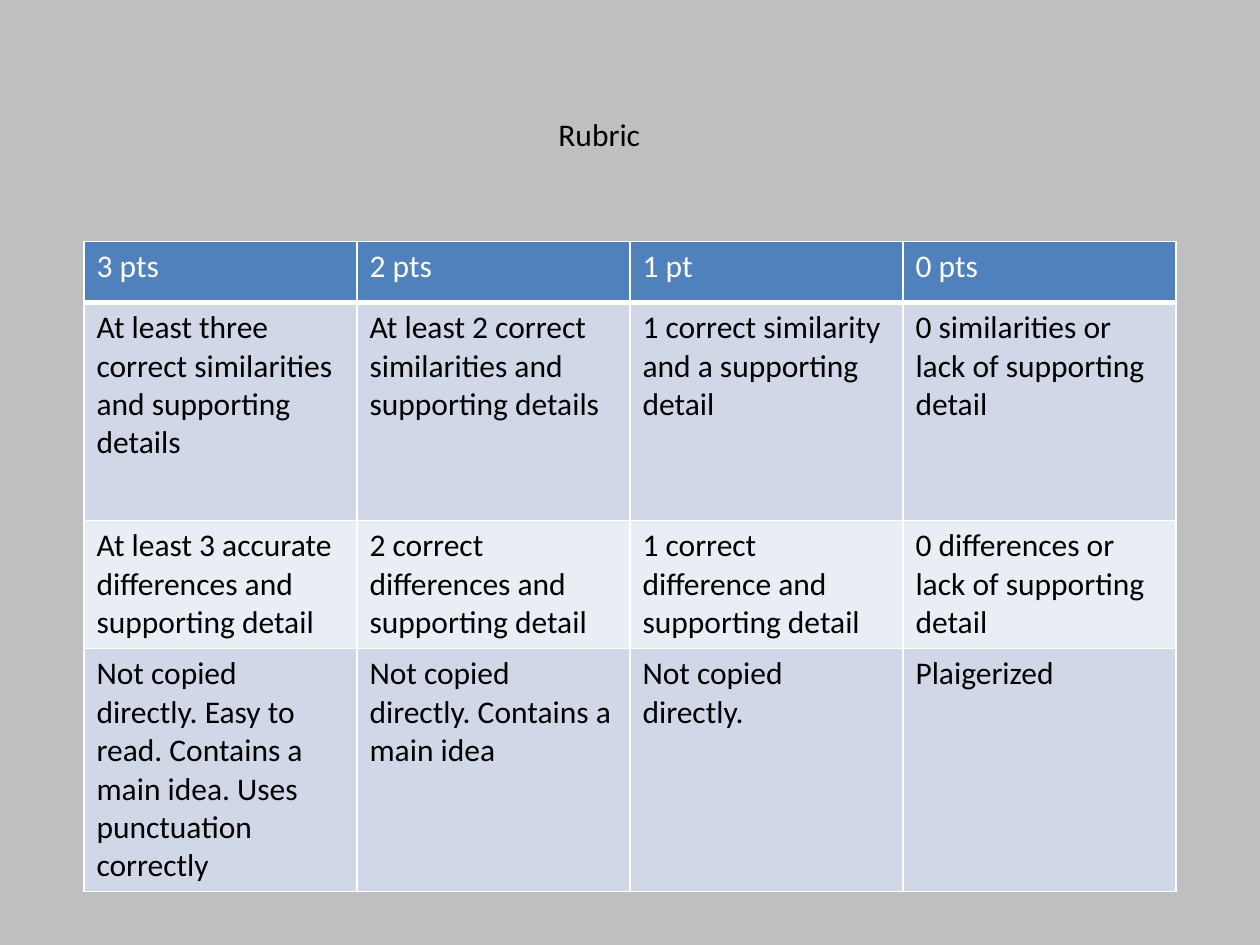
from pptx import Presentation
from pptx.dml.color import RGBColor
from pptx.oxml import parse_xml
from pptx.oxml.ns import nsdecls
from pptx.util import Pt

TITLE = "Rubric"
RUBRIC = [
    ("3 pts", "2 pts", "1 pt", "0 pts"),
    (
        "At least three correct similarities and supporting details",
        "At least 2 correct similarities and supporting details",
        "1 correct similarity and a supporting detail",
        "0 similarities or lack of supporting detail",
    ),
    (
        "At least 3 accurate differences and supporting detail",
        "2 correct differences and supporting detail",
        "1 correct difference and supporting detail",
        "0 differences or lack of supporting detail",
    ),
    (
        "Not copied directly. Easy to read. Contains a main idea. Uses punctuation correctly",
        "Not copied directly. Contains a main idea",
        "Not copied directly.",
        "Plaigerized",
    ),
]

GRAY = RGBColor(0xBF, 0xBF, 0xBF)
BLUE = RGBColor(0x4F, 0x81, 0xBD)
BAND_DARK = RGBColor(0xD0, 0xD8, 0xE8)
BAND_LIGHT = RGBColor(0xE9, 0xED, 0xF4)
WHITE = RGBColor(0xFF, 0xFF, 0xFF)
BLACK = RGBColor(0, 0, 0)

TABLE_LEFT, TABLE_TOP, COLUMN_WIDTH = 48, 138, 156
ROW_HEIGHTS = (34.8, 124.6, 73, 139)


def write_text(text_frame, text, color):
    paragraph = text_frame.paragraphs[0]
    run = paragraph.add_run()
    run.text = text
    for name, value in {"name": "Calibri", "size": Pt(18), "bold": False}.items():
        setattr(run.font, name, value)
    run.font.color.rgb = color


def add_borders(cell, bottom_width):
    properties = cell._tc.get_or_add_tcPr()
    widths = {"lnL": 1, "lnR": 1, "lnT": 1, "lnB": bottom_width}
    for position, (tag, width) in enumerate(widths.items()):
        properties.insert(position, parse_xml(
            f'<a:{tag} {nsdecls("a")} w="{Pt(width)}"><a:solidFill>'
            f'<a:srgbClr val="{WHITE}"/></a:solidFill></a:{tag}>'
        ))


def add_rubric(slide):
    table = slide.shapes.add_table(
        len(RUBRIC), len(RUBRIC[0]), Pt(TABLE_LEFT), Pt(TABLE_TOP),
        Pt(COLUMN_WIDTH * len(RUBRIC[0])), Pt(sum(ROW_HEIGHTS)),
    ).table
    for column in table.columns:
        column.width = Pt(COLUMN_WIDTH)
    for row_index, (texts, height) in enumerate(zip(RUBRIC, ROW_HEIGHTS)):
        table.rows[row_index].height = Pt(height)
        is_header = row_index == 0
        band = BAND_DARK if row_index % 2 else BAND_LIGHT
        for column_index, text in enumerate(texts):
            cell = table.cell(row_index, column_index)
            cell.fill.solid()
            cell.fill.fore_color.rgb = BLUE if is_header else band
            add_borders(cell, 3 if is_header else 1)
            write_text(cell.text_frame, text, WHITE if is_header else BLACK)


def main():
    presentation = Presentation()
    presentation.slide_width, presentation.slide_height = Pt(720), Pt(540)
    slide = presentation.slides.add_slide(presentation.slide_layouts[6])
    slide.background.fill.solid()
    slide.background.fill.fore_color.rgb = GRAY

    # Rubric table
    add_rubric(slide)

    # Title
    title = slide.shapes.add_textbox(Pt(312), Pt(62), Pt(85), Pt(36))
    title.text_frame.word_wrap = True
    write_text(title.text_frame, TITLE, BLACK)

    presentation.save("out.pptx")


if __name__ == "__main__":
    main()
